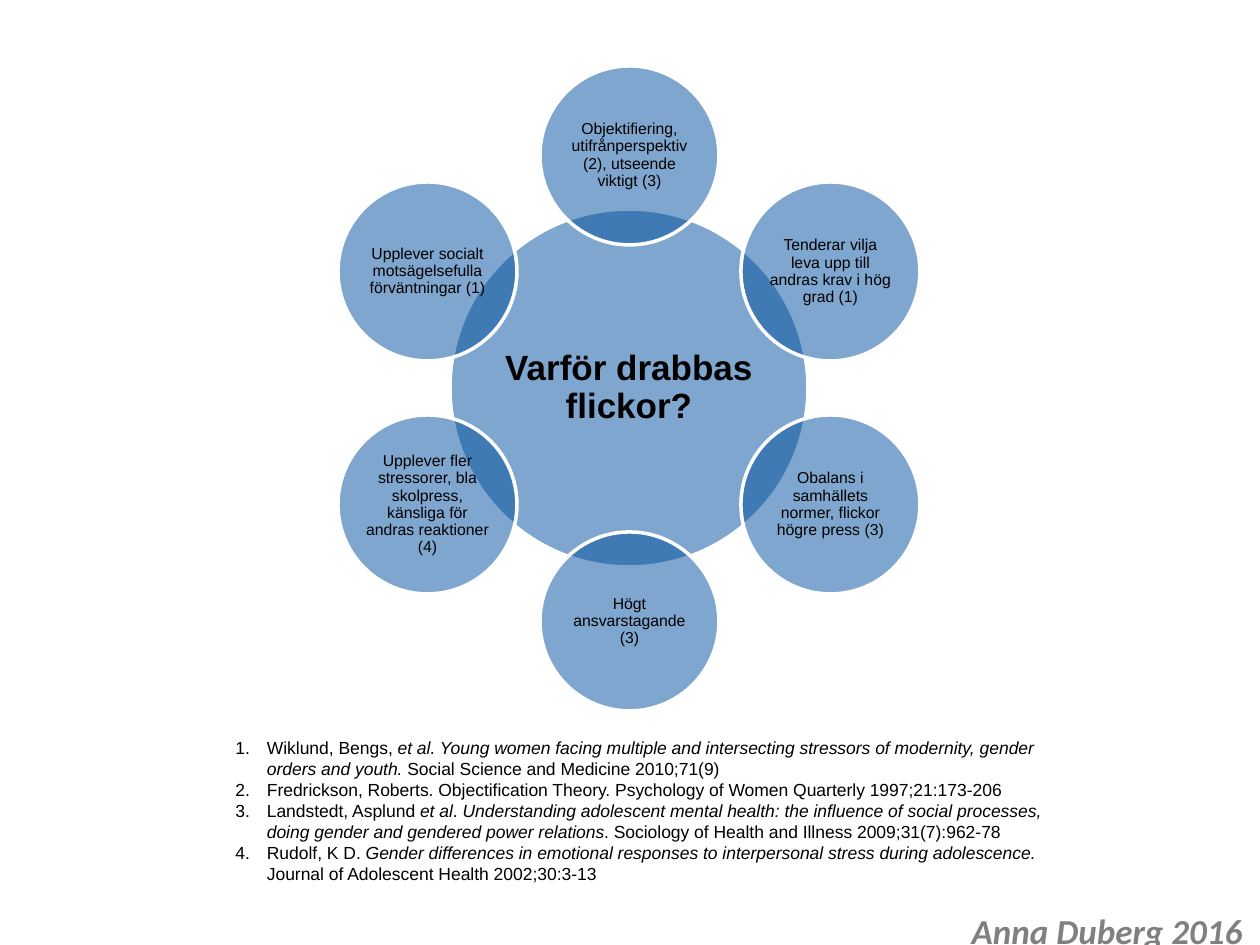
from dataclasses import dataclass
from math import cos, radians, sin

from lxml.etree import SubElement
from pptx import Presentation
from pptx.dml.color import RGBColor
from pptx.enum.shapes import MSO_SHAPE as Shape
from pptx.enum.text import MSO_ANCHOR as Anchor, MSO_AUTO_SIZE as AutoSize, PP_ALIGN as Align
from pptx.oxml.ns import qn
from pptx.util import Pt

EMU_PER_PX = 914400 // 126


@dataclass(frozen=True)
class Theme:
    """Colours, fonts and type sizes of the slide."""
    circle: RGBColor = RGBColor(0x00, 0x4F, 0x9E)
    outline: RGBColor = RGBColor(0xFF, 0xFF, 0xFF)
    text: RGBColor = RGBColor(0x00, 0x00, 0x00)
    signature: RGBColor = RGBColor(0x80, 0x80, 0x80)
    body_font: str = "Arial"
    signature_font: str = "Calibri"
    title_size: int = 20
    cause_size: int = 9
    reference_size: int = 10
    signature_size: int = 20


THEME = Theme()
QUESTION = "Varför drabbas flickor?"
CAUSES = [
    "Objektifiering, utifrånperspektiv (2), utseende viktigt (3)",
    "Tenderar vilja leva upp till andras krav i hög grad (1)",
    "Obalans i samhällets normer, flickor högre press (3)",
    "Högt ansvarstagande (3)",
    "Upplever fler stressorer, bla skolpress, känsliga för andras reaktioner (4)",
    "Upplever socialt motsägelsefulla förväntningar (1)",
]
REFERENCES = [
    [("Wiklund, Bengs, ", False),
     ("et al. Young women facing multiple and intersecting stressors of modernity, "
      "gender orders and youth. ", True),
     ("Social Science and Medicine 2010;71(9)", False)],
    [("Fredrickson, Roberts. Objectification Theory. "
      "Psychology of Women Quarterly 1997;21:173-206", False)],
    [("Landstedt, Asplund ", False), ("et al", True), (". ", False),
     ("Understanding adolescent mental health: the influence of social processes, "
      "doing gender and gendered power relations", True),
     (". Sociology of Health and Illness 2009;31(7):962-78", False)],
    [("Rudolf, K D. ", False),
     ("Gender differences in emotional responses to interpersonal stress "
      "during adolescence. ", True),
     ("Journal of Adolescent Health 2002;30:3-13", False)],
]


def px(length):
    """Turn pixels into EMU."""
    return round(length) * EMU_PER_PX


def add_run(paragraph, text, size, color=THEME.text, font=THEME.body_font,
            bold=False, italic=False):
    """Append one formatted run to a paragraph."""
    run = paragraph.add_run()
    run.text = text
    run.font.name = font
    run.font.size = Pt(size)
    run.font.bold = bold
    run.font.italic = italic
    run.font.color.rgb = color


def add_circle(slide, center_x, center_y, diameter, text, size, bold=False):
    """Add a half-transparent circle with centred text."""
    circle = slide.shapes.add_shape(
        Shape.OVAL, px(center_x - diameter / 2), px(center_y - diameter / 2),
        px(diameter), px(diameter))
    circle.shadow.inherit = False
    circle.fill.solid()
    circle.fill.fore_color.rgb = THEME.circle
    color = circle.fill._xPr.find(qn("a:solidFill"))[0]
    SubElement(color, qn("a:alpha"), val="50000")
    circle.line.color.rgb = THEME.outline
    circle.line.width = Pt(2)
    frame = circle.text_frame
    frame.word_wrap = True
    frame.vertical_anchor = Anchor.MIDDLE
    frame.margin_left = frame.margin_right = frame.margin_top = frame.margin_bottom = 0
    paragraph = frame.paragraphs[0]
    paragraph.alignment = Align.CENTER
    paragraph.line_spacing = 0.9
    add_run(paragraph, text, size, bold=bold)


def add_radial_diagram(slide, center_x, center_y, radius):
    """Add the question circle with its causes spaced evenly around it."""
    add_circle(slide, center_x, center_y, 358, QUESTION, THEME.title_size, bold=True)
    for index, cause in enumerate(CAUSES):
        angle = radians(index * 360 / len(CAUSES) - 90)
        add_circle(slide, center_x + radius * cos(angle), center_y + radius * sin(angle),
                   179, cause, THEME.cause_size)


def add_text_frame(slide, left, top, width, height, wrap):
    """Add a text box that grows with its text and return its frame."""
    box = slide.shapes.add_textbox(px(left), px(top), px(width), px(height))
    frame = box.text_frame
    frame.word_wrap = wrap
    frame.auto_size = AutoSize.SHAPE_TO_FIT_TEXT
    return frame


def add_references(slide):
    """Add the numbered reference list."""
    frame = add_text_frame(slide, 223, 731, 877, 183, wrap=True)
    for index, reference in enumerate(REFERENCES):
        paragraph = frame.add_paragraph() if index else frame.paragraphs[0]
        properties = paragraph._p.get_or_add_pPr()
        properties.set("marL", "228600")
        properties.set("indent", "-228600")
        SubElement(properties, qn("a:buFont"), typeface="+mj-lt")
        SubElement(properties, qn("a:buAutoNum"), type="arabicPeriod")
        for text, italic in reference:
            add_run(paragraph, text, THEME.reference_size, italic=italic)


def add_signature(slide):
    """Add the author and year in the bottom right corner."""
    paragraph = add_text_frame(slide, 958, 903, 297, 55, wrap=False).paragraphs[0]
    paragraph.alignment = Align.RIGHT
    add_run(paragraph, "Anna Duberg 2016", THEME.signature_size, THEME.signature,
            THEME.signature_font, bold=True, italic=True)


def main():
    """Build the slide and save it."""
    presentation = Presentation()
    presentation.slide_width = px(1260)
    presentation.slide_height = px(945)
    slide = presentation.slides.add_slide(presentation.slide_layouts[6])
    add_radial_diagram(slide, 629, 388, 233)
    add_references(slide)
    add_signature(slide)
    presentation.save("out.pptx")


if __name__ == "__main__":
    main()
